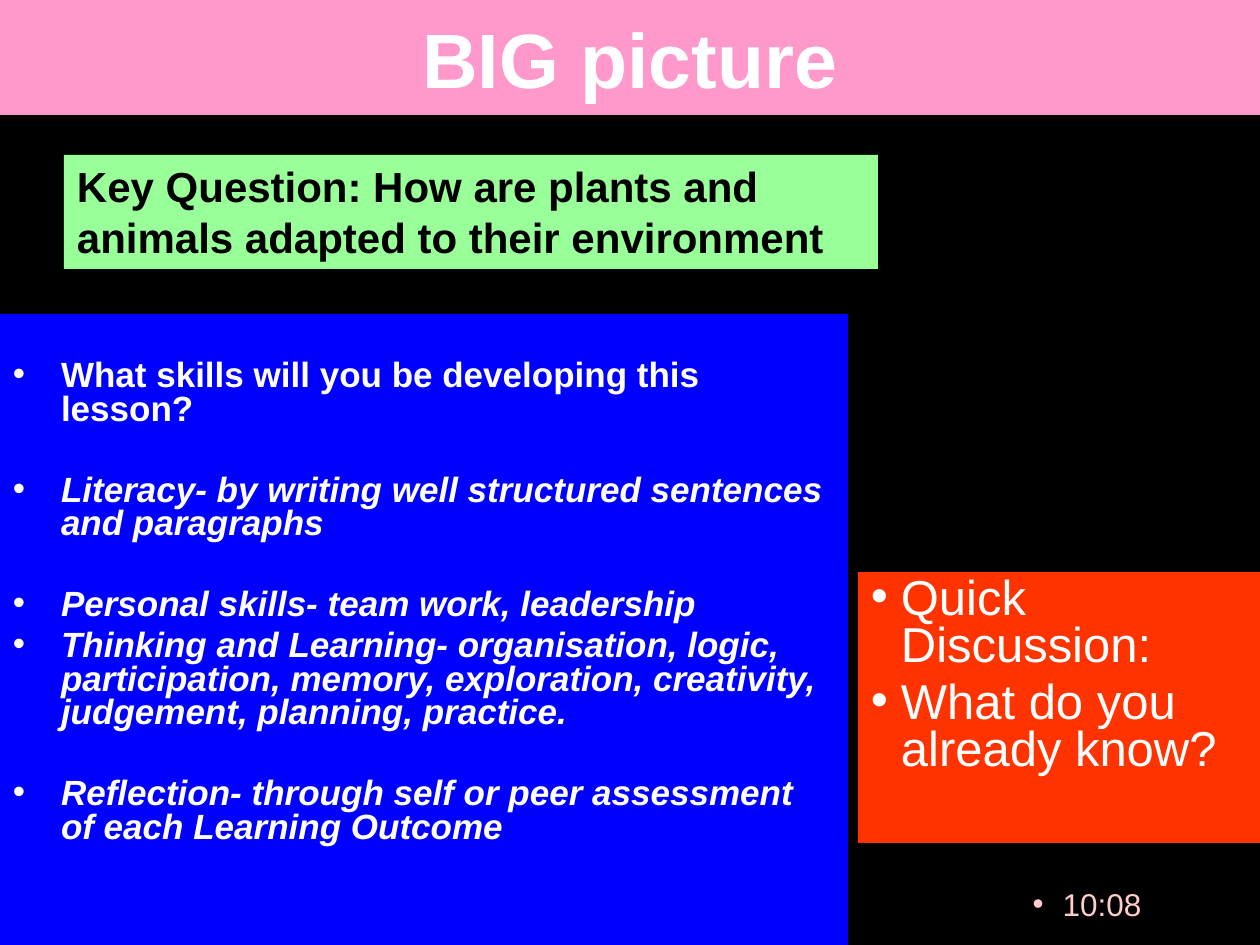
from pptx import Presentation
from pptx import util as u
from pptx.dml.color import RGBColor
from pptx.enum import shapes, text
from pptx.oxml.ns import qn
from lxml import etree

PX = 914400 / 126
FONT = "Arial"
COLOURS = {
    "background": "000000", "title": "FF99CC", "question": "99FF99",
    "skills": "0000FF", "discussion": "FF3300", "time": "FFCCCC",
    "white": "FFFFFF", "black": "000000",
}
GAP = 27  # points before a paragraph that opens a new group
SKILLS = [
    ("What skills will you be developing this lesson?", False, 0),
    ("Literacy- by writing well structured sentences and paragraphs", True, GAP),
    ("Personal skills- team work, leadership", True, GAP),
    ("Thinking and Learning- organisation, logic, participation, memory, "
     "exploration, creativity, judgement, planning, practice.", True, 4),
    ("Reflection- through self or peer assessment of each Learning Outcome", True, GAP),
]
DISCUSSION = [("Quick Discussion:", 0), ("What do you already know?", 5.6)]


def px(n):
    return u.Emu(round(n * PX))


def colour(name):
    return RGBColor.from_string(COLOURS[name])


def set_frame(sp, **margins):
    tf = sp.text_frame
    frame = {"word_wrap": True, "vertical_anchor": text.MSO_ANCHOR.TOP,
             "margin_left": px(13), "margin_right": px(13),
             "margin_top": px(6), "margin_bottom": px(6)}
    for name, value in {**frame, **margins}.items():
        setattr(tf, name, value)
    return tf


def add_panel(slide, box, fill, **margins):
    sp = slide.shapes.add_shape(shapes.MSO_SHAPE.RECTANGLE, *map(px, box))
    sp.shadow.inherit = False
    sp.fill.solid()
    sp.fill.fore_color.rgb = colour(fill)
    sp.line.fill.background()
    return set_frame(sp, **margins)


def add_paragraph(tf, words, size, ink, bold=False, italic=False,
                  align=text.PP_ALIGN.LEFT, **spacing):
    p = tf.paragraphs[0] if not tf.text else tf.add_paragraph()
    for name, value in {"alignment": align, **spacing}.items():
        setattr(p, name, value)
    r = p.add_run()
    r.text = words
    font = {"name": FONT, "size": u.Pt(size), "bold": bold, "italic": italic}
    for name, value in font.items():
        setattr(r.font, name, value)
    r.font.color.rgb = colour(ink)
    return p


def add_bullet(p, indent):
    pPr = p._p.get_or_add_pPr()
    pPr.set("marL", str(px(indent)))
    pPr.set("indent", str(-px(indent)))
    etree.SubElement(pPr, qn("a:buFont")).set("typeface", FONT)
    etree.SubElement(pPr, qn("a:buChar")).set("char", "•")


def main():
    prs = Presentation()
    prs.slide_width, prs.slide_height = px(1260), px(945)
    slide = prs.slides.add_slide(prs.slide_layouts[6])
    slide.background.fill.solid()
    slide.background.fill.fore_color.rgb = colour("background")

    # Time
    tf = set_frame(slide.shapes.add_textbox(*map(px, (988, 879, 198, 66))))
    p = add_paragraph(tf, "10:08", 18, "time", align=text.PP_ALIGN.CENTER)
    add_bullet(p, 30)

    # Title
    tf = add_panel(slide, (0, 0, 1260, 115), "title",
                   vertical_anchor=text.MSO_ANCHOR.MIDDLE)
    add_paragraph(tf, "BIG picture", 44, "white", bold=True,
                  align=text.PP_ALIGN.CENTER)

    # Skills
    tf = add_panel(slide, (0, 314, 848, 631), "skills", margin_top=px(47))
    for words, italic, before in SKILLS:
        p = add_paragraph(tf, words, 20, "white", bold=True, italic=italic,
                          line_spacing=0.8, space_before=u.Pt(before))
        add_bullet(p, 48)

    # Key question
    tf = add_panel(slide, (64, 155, 814, 114), "question")
    add_paragraph(tf, "Key Question: How are plants and animals adapted "
                  "to their environment", 24, "black", bold=True)

    # Discussion
    tf = add_panel(slide, (858, 572, 402, 271), "discussion")
    for words, before in DISCUSSION:
        p = add_paragraph(tf, words, 28, "white", line_spacing=0.8,
                          space_before=u.Pt(before))
        add_bullet(p, 30)

    prs.save("out.pptx")


if __name__ == "__main__":
    main()
